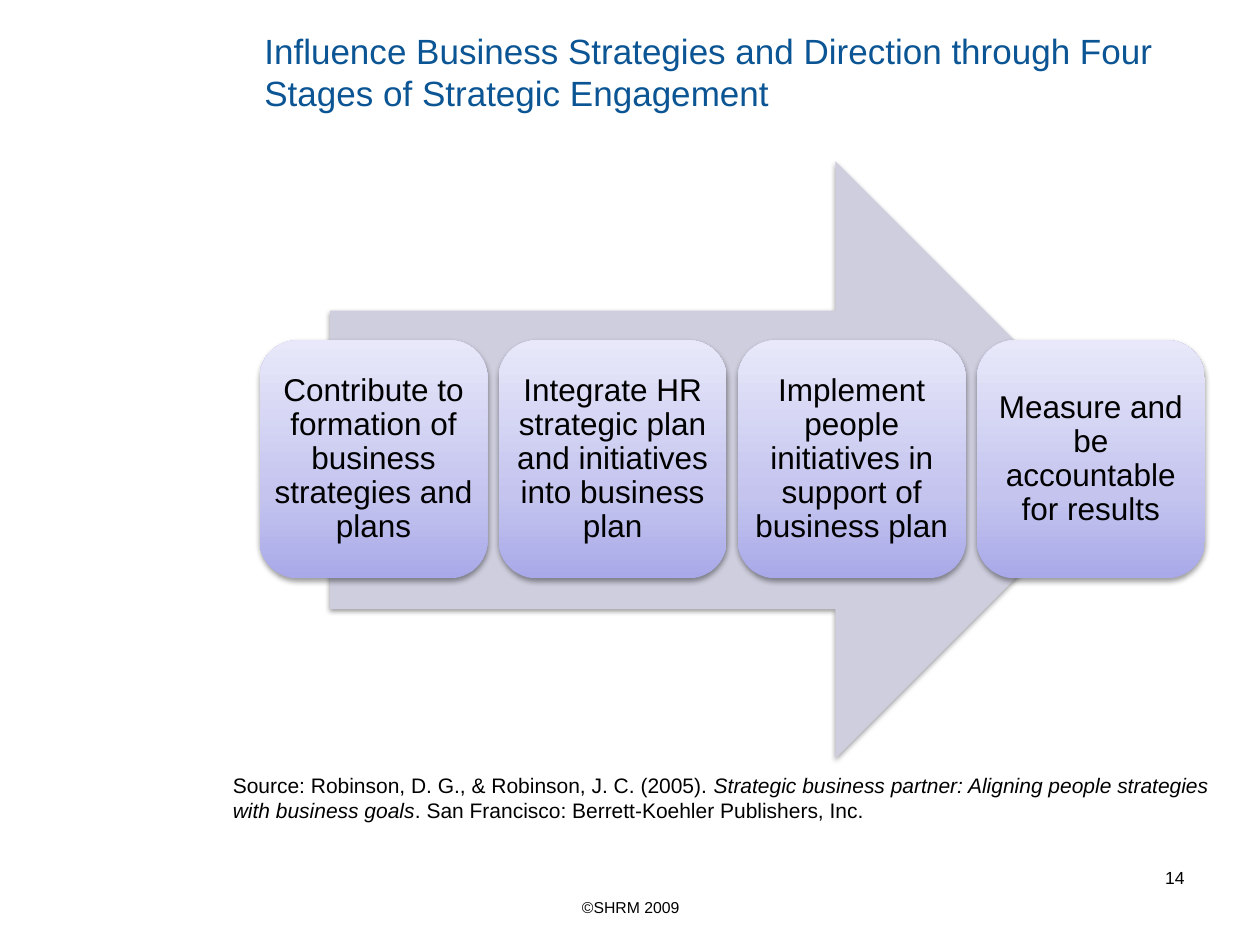
import copy
import dataclasses

import lxml.etree
import pptx
import pptx.dml.color
import pptx.enum.shapes
import pptx.enum.text
import pptx.oxml.ns
import pptx.util

SHAPE = pptx.enum.shapes.MSO_SHAPE
ALIGN = pptx.enum.text.PP_ALIGN
ANCHOR = pptx.enum.text.MSO_ANCHOR


@dataclasses.dataclass(frozen=True)
class Theme:
    font: str = "Arial"
    ink: str = "000000"
    heading: str = "0B5594"
    arrow: str = "CECEDE"
    card: tuple = ((0, "A9A9E9"), (0.35, "C4C4EF"), (1, "E8E8FA"))
    title_size: int = 20
    card_size: int = 18
    source_size: int = 12
    number_size: int = 10
    footer_size: int = 9


class Slide:
    """Draws themed elements on a page measured in 40 columns and 30 rows."""

    def __init__(self, deck, theme):
        self.theme = theme
        self.page = deck.slides.add_slide(deck.slide_layouts[6])
        self.column = deck.slide_width / 40
        self.row = deck.slide_height / 30

    def place(self, left, top, width, height):
        return (round(left * self.column), round(top * self.row),
                round(width * self.column), round(height * self.row))

    def fill_text(self, box, spans, size, color, align, anchor, spacing=None):
        frame = box.text_frame
        frame.word_wrap = True
        frame.vertical_anchor = anchor
        para = frame.paragraphs[0]
        para.alignment = align
        para.line_spacing = spacing
        for text, italic in spans:
            span = para.add_run()
            span.text = text
            span.font.name = self.theme.font
            span.font.size = pptx.util.Pt(size)
            span.font.italic = italic
            span.font.color.rgb = pptx.dml.color.RGBColor.from_string(color)

    def text(self, area, spans, size, color=None, align=ALIGN.LEFT, anchor=ANCHOR.TOP):
        box = self.page.shapes.add_textbox(*self.place(*area))
        self.fill_text(box, spans, size, color or self.theme.ink, align, anchor)

    def shape(self, kind, area):
        shape = self.page.shapes.add_shape(kind, *self.place(*area))
        shape.line.fill.background()
        shape.shadow.inherit = False
        tag = pptx.oxml.ns.qn
        effects = shape._element.spPr.find(tag("a:effectLst"))
        shadow = lxml.etree.SubElement(effects, tag("a:outerShdw"), blurRad="40000",
                                       dist="20000", dir="5400000", rotWithShape="0")
        color = lxml.etree.SubElement(shadow, tag("a:srgbClr"), val="000000")
        lxml.etree.SubElement(color, tag("a:alpha"), val="38000")
        return shape

    def arrow(self, area):
        arrow = self.shape(SHAPE.RIGHT_ARROW, area)
        arrow.fill.solid()
        arrow.fill.fore_color.rgb = pptx.dml.color.RGBColor.from_string(self.theme.arrow)

    def card(self, area, text):
        card = self.shape(SHAPE.ROUNDED_RECTANGLE, area)
        card.fill.gradient()
        card.fill.gradient_angle = 90
        stops = card._element.spPr.find(".//" + pptx.oxml.ns.qn("a:gsLst"))
        stops.append(copy.deepcopy(stops[-1]))
        for stop, (position, color) in zip(card.fill.gradient_stops, self.theme.card):
            stop.position = position
            stop.color.rgb = pptx.dml.color.RGBColor.from_string(color)
        frame = card.text_frame
        frame.margin_left = frame.margin_right = frame.margin_top = frame.margin_bottom = 0
        self.fill_text(card, [(text, False)], self.theme.card_size, self.theme.ink,
                       ALIGN.CENTER, ANCHOR.MIDDLE, 0.9)


def main():
    deck = pptx.Presentation()
    deck.slide_width = pptx.util.Inches(10)
    deck.slide_height = pptx.util.Inches(7.5)
    theme = Theme()
    slide = Slide(deck, theme)

    title = "Influence Business Strategies and Direction through Four Stages of Strategic Engagement"
    slide.text((8, 1.2, 30, 2.12), [(title, False)], theme.title_size, theme.heading,
               anchor=ANCHOR.MIDDLE)

    slide.arrow((10.48, 5.12, 25.52, 18.96))
    stages = (
        "Contribute to formation of business strategies and plans",
        "Integrate HR strategic plan and initiatives into business plan",
        "Implement people initiatives in support of business plan",
        "Measure and be accountable for results",
    )
    for index, stage in enumerate(stages):
        slide.card((8.24 + index * 7.59, 10.8, 7.24, 7.56), stage)

    slide.text((13.68, 28.32, 12.68, 1.08), [("©SHRM 2009", False)],
               theme.footer_size, align=ALIGN.CENTER)
    slide.text((28.68, 27.32, 9.32, 2.08), [("14", False)],
               theme.number_size, align=ALIGN.RIGHT)
    source = [
        ("Source: Robinson, D. G., & Robinson, J. C. (2005). ", False),
        ("Strategic business partner: Aligning people strategies with business goals", True),
        (". San Francisco: Berrett-Koehler Publishers, Inc.", False),
    ]
    slide.text((7, 24.32, 32, 2), source, theme.source_size)

    deck.save("out.pptx")


if __name__ == "__main__":
    main()
